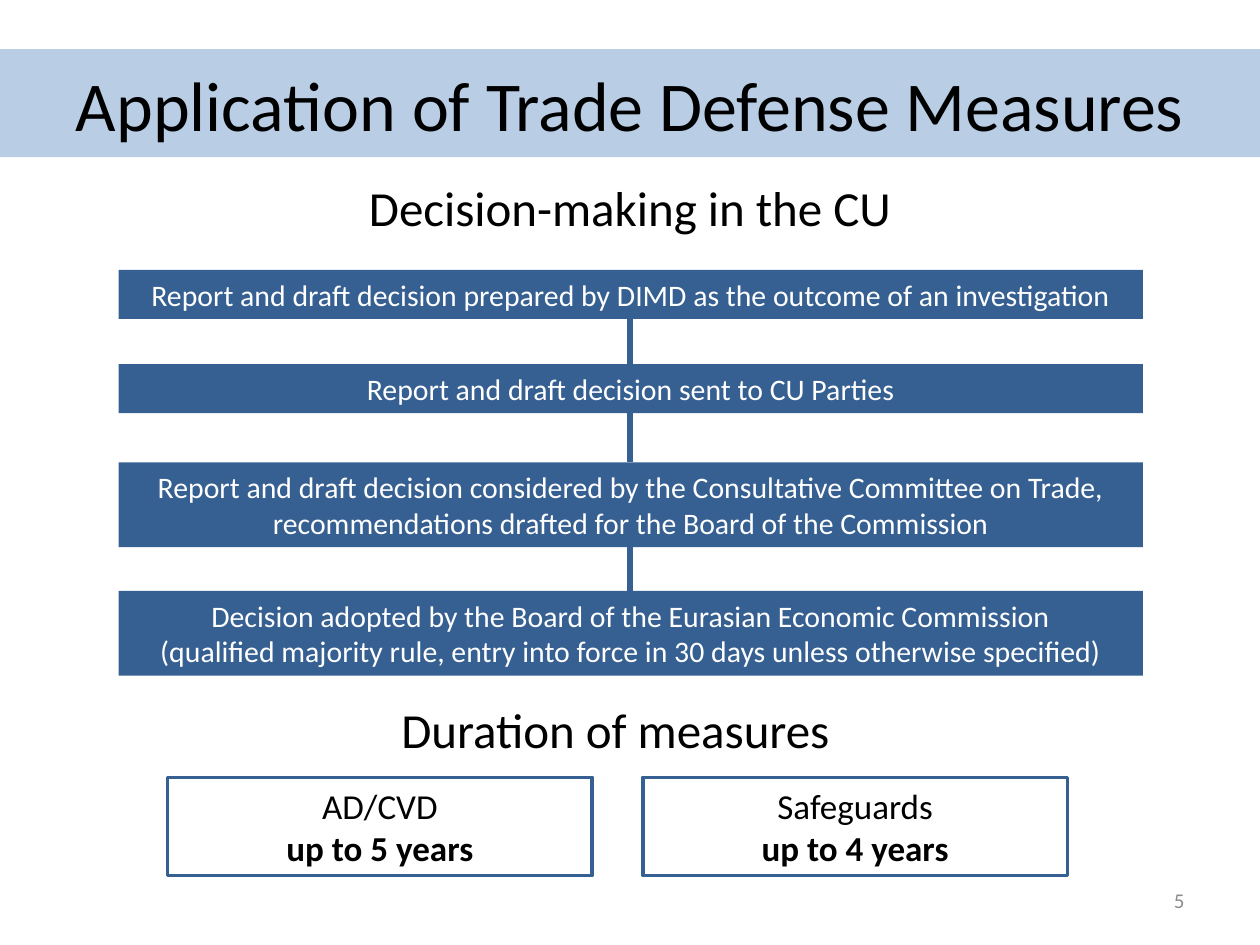
from itertools import pairwise

from lxml import etree
from pptx import Presentation
from pptx.dml.color import RGBColor
from pptx.enum.shapes import MSO_CONNECTOR, MSO_SHAPE
from pptx.enum.text import MSO_ANCHOR, PP_ALIGN
from pptx.oxml.ns import qn
from pptx.util import Cm, Pt

RECT = MSO_SHAPE.RECTANGLE
STRAIGHT = MSO_CONNECTOR.STRAIGHT
MIDDLE = MSO_ANCHOR.MIDDLE
CENTER, RIGHT = PP_ALIGN.CENTER, PP_ALIGN.RIGHT

NAVY = RGBColor(0x37, 0x60, 0x92)
PALE = RGBColor(0xB9, 0xCD, 0xE5)
GRAY = RGBColor(0x8C, 0x8C, 0x8C)
BLACK = RGBColor(0, 0, 0)
WHITE = RGBColor(0xFF, 0xFF, 0xFF)

FONT = "Calibri"
WIDTH, HEIGHT = 25.4, 19.05
STEP_LEFT, STEP_WIDTH = 2.39, 20.65

# Top, height and text of each step
STEPS = [
    (5.44, 0.99, "Report and draft decision prepared by DIMD as the outcome of an investigation"),
    (7.34, 0.99, "Report and draft decision sent to CU Parties"),
    (9.32, 1.71, "Report and draft decision considered by the Consultative Committee on Trade,\n"
                 "recommendations drafted for the Board of the Commission"),
    (11.91, 1.71, "Decision adopted by the Board of the Eurasian Economic Commission\n"
                  "(qualified majority rule, entry into force in 30 days unless otherwise specified)"),
]
TERMS = [("AD/CVD", "up to 5 years"), ("Safeguards", "up to 4 years")]


def write(shape, text, size, color, align=CENTER):
    frame = shape.text_frame
    frame.word_wrap = True
    frame.vertical_anchor = MIDDLE
    frame.text = text
    for para in frame.paragraphs:
        para.alignment = align
        for run in para.runs:
            run.font.name = FONT
            run.font.size = Pt(size)
            run.font.color.rgb = color


def add_label(slide, box, text, size, color=BLACK, align=CENTER):
    label = slide.shapes.add_textbox(*map(Cm, box))
    write(label, text, size, color, align)


def add_bar(slide, box, fill, text, size, color):
    bar = slide.shapes.add_shape(RECT, *map(Cm, box))
    bar.shadow.inherit = False
    bar.fill.solid()
    bar.fill.fore_color.rgb = fill
    bar.line.fill.background()
    write(bar, text, size, color)


def add_term(slide, box, name, limit):
    """Add an outlined box with a measure and its time limit in bold."""
    term = slide.shapes.add_shape(RECT, *map(Cm, box))
    term.shadow.inherit = False
    term.fill.background()
    term.line.color.rgb = NAVY
    term.line.width = Pt(2)
    write(term, f"{name}\n{limit}", 20, BLACK)
    term.text_frame.paragraphs[1].runs[0].font.bold = True


def add_link(slide, start, end):
    """Join two steps along the middle of the slide."""
    mid = Cm(WIDTH / 2)
    link = slide.shapes.add_connector(STRAIGHT, mid, Cm(start), mid, Cm(end))
    link.line.color.rgb = NAVY
    link.line.width = Pt(3)
    etree.SubElement(link._element.spPr, qn("a:effectLst"))


def main():
    deck = Presentation()
    deck.slide_width, deck.slide_height = Cm(WIDTH), Cm(HEIGHT)
    slide = deck.slides.add_slide(deck.slide_layouts[6])

    add_bar(slide, (0, 0.99, WIDTH, 2.18), PALE,
            "Application of Trade Defense Measures", 40, BLACK)
    add_label(slide, (0, 3.58, WIDTH, 1.19), "Decision-making in the CU", 28)

    for top, height, text in STEPS:
        add_bar(slide, (STEP_LEFT, top, STEP_WIDTH, height), NAVY, text, 17, WHITE)
    for (top, height, _), (below, _, _) in pairwise(STEPS):
        add_link(slide, top + height, below)

    add_label(slide, (2.18, 14.1, 20.45, 1.19), "Duration of measures", 28)
    for i, (name, limit) in enumerate(TERMS):
        add_term(slide, (3.38 + i * 9.58, 15.67, 8.56, 1.98), name, limit)

    add_label(slide, (18.2, 17.65, 5.93, 1.01), "5", 12, GRAY, RIGHT)
    deck.save("out.pptx")


if __name__ == "__main__":
    main()
